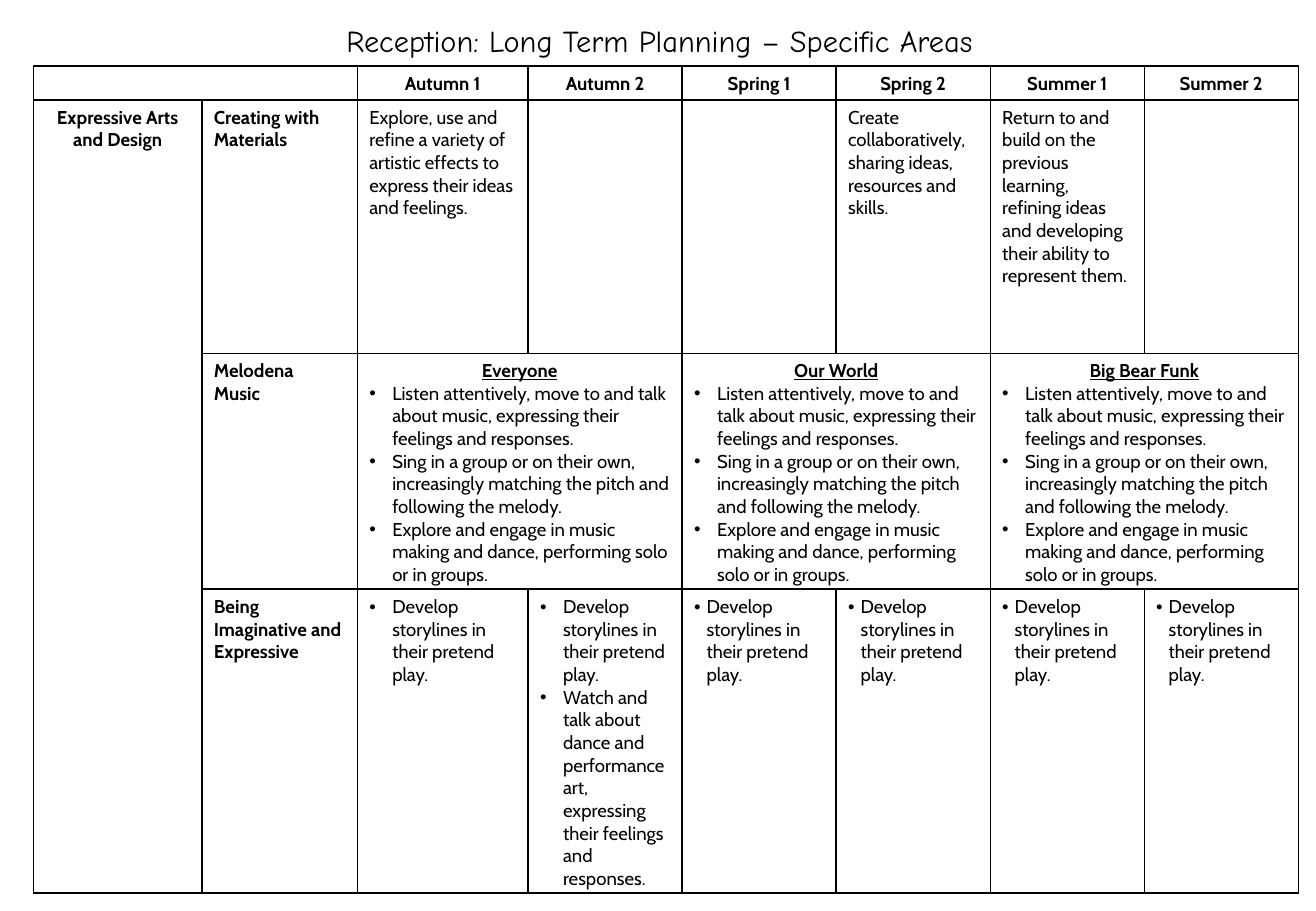
"""Build the Reception long term planning slide for Expressive Arts and Design."""
from lxml import etree
from pptx import Presentation
from pptx.dml.color import RGBColor
from pptx.enum import text as t
from pptx.oxml.ns import qn
from pptx.util import Cm, Pt

BLACK = RGBColor(0, 0, 0)
BODY_FONT, TITLE_FONT = "Cabin", "Comic Neue"
BODY_SIZE = 11
WIDE_INDENT, NARROW_INDENT = Cm(0.48), Cm(0.26)
COLUMN_WIDTHS = [3.52, 3.25, 3.57] + [3.22] * 5
ROW_HEIGHTS = [0.71, 5.3, 4.93, 6.31]
TERMS = [f"{season} {half}" for season in ("Autumn", "Spring", "Summer") for half in (1, 2)]
MATERIALS = {
    2: "Explore, use and refine a variety of artistic effects to express their ideas and feelings.",
    5: "Create collaboratively, sharing ideas, resources and skills.",
    6: "Return to and build on the previous learning, refining ideas and developing "
       "their ability to represent them.",
}
MUSIC_UNITS = {2: "Everyone", 4: "Our World", 6: "Big Bear Funk"}
MUSIC_GOALS = [
    "Listen attentively, move to and talk about music, expressing their feelings and responses.",
    "Sing in a group or on their own, increasingly matching the pitch and following the melody.",
    "Explore and engage in music making and dance, performing solo or in groups.",
]
STORYLINES = "Develop storylines in their pretend play."
DANCE = "Watch and talk about dance and performance art, expressing their feelings and responses."


def style_runs(paragraph, font_name, size, bold=False, underline=False):
    for run in paragraph.runs:
        font = run.font
        font.name, font.size = font_name, Pt(size)
        font.bold, font.underline = bold, underline
        font.color.rgb = BLACK


def add_title(slide, wording):
    title = slide.shapes.title
    title.left, title.top, title.width, title.height = Cm(6.1), Cm(0.33), Cm(15.37), Cm(1.02)
    title.text_frame.text = wording
    title.text_frame.vertical_anchor = t.MSO_ANCHOR.TOP
    heading = title.text_frame.paragraphs[0]
    heading.alignment = t.PP_ALIGN.CENTER
    style_runs(heading, TITLE_FONT, 18)


def format_cell(cell):
    cell.margin_left = cell.margin_right = Cm(0.25)
    cell.margin_top, cell.margin_bottom = Cm(0.13), Cm(0.06)
    cell.vertical_anchor = t.MSO_ANCHOR.TOP
    properties = cell._tc.get_or_add_tcPr()
    for side in ("a:lnL", "a:lnR", "a:lnT", "a:lnB"):
        border = etree.SubElement(properties, qn(side), w=str(Pt(1)))
        fill = etree.SubElement(border, qn("a:solidFill"))
        etree.SubElement(fill, qn("a:srgbClr"), val=str(BLACK))
    cell.fill.background()
    empty = cell.text_frame.paragraphs[0]._p
    etree.SubElement(empty, qn("a:endParaRPr"), sz=str(BODY_SIZE * 100))


def add_planning_table(slide):
    frame = slide.shapes.add_table(len(ROW_HEIGHTS), len(COLUMN_WIDTHS), Cm(0.7), Cm(1.38),
                                   Cm(sum(COLUMN_WIDTHS)), Cm(sum(ROW_HEIGHTS)))
    planning = frame.table
    planning.first_row = planning.horz_banding = False
    for column, width in zip(planning.columns, COLUMN_WIDTHS):
        column.width = Cm(width)
    for row, height in zip(planning.rows, ROW_HEIGHTS):
        row.height = Cm(height)
    for cell in planning.iter_cells():
        format_cell(cell)
    planning.cell(0, 0).merge(planning.cell(0, 1))
    planning.cell(1, 0).merge(planning.cell(3, 0))
    for column in MUSIC_UNITS:
        planning.cell(2, column).merge(planning.cell(2, column + 1))
    return planning


def write(cell, wording, centred=False, **style):
    cell.text_frame.text = wording
    for paragraph in cell.text_frame.paragraphs:
        paragraph.alignment = t.PP_ALIGN.CENTER if centred else t.PP_ALIGN.LEFT
        style_runs(paragraph, BODY_FONT, BODY_SIZE, **style)


def make_bullet(paragraph, indent):
    properties = paragraph._p.get_or_add_pPr()
    properties.set("marL", str(indent))
    properties.set("indent", str(-indent))
    etree.SubElement(properties, qn("a:buFont"), typeface="Arial")
    etree.SubElement(properties, qn("a:buChar"), char="•")


def write_bullets(cell, goals, indent):
    write(cell, "\n".join(goals))
    for paragraph in cell.text_frame.paragraphs:
        make_bullet(paragraph, indent)


def write_music_unit(cell, unit):
    write(cell, "\n".join([unit, *MUSIC_GOALS]))
    heading, *goals = cell.text_frame.paragraphs
    heading.alignment = t.PP_ALIGN.CENTER
    style_runs(heading, BODY_FONT, BODY_SIZE, bold=True, underline=True)
    for goal in goals:
        make_bullet(goal, WIDE_INDENT)


def main():
    deck = Presentation()
    deck.slide_width, deck.slide_height = Cm(27.51), Cm(19.05)
    slide = deck.slides.add_slide(deck.slide_layouts[5])
    add_title(slide, "Reception: Long Term Planning – Specific Areas")
    planning = add_planning_table(slide)

    for column, term in enumerate(TERMS, 2):
        write(planning.cell(0, column), term, centred=True, bold=True)
    write(planning.cell(1, 0), "Expressive Arts and Design", centred=True, bold=True)
    strands = ["Creating with Materials", "Melodena\nMusic", "Being Imaginative and Expressive"]
    for row, strand in enumerate(strands, 1):
        write(planning.cell(row, 1), strand, bold=True)

    for column, goal in MATERIALS.items():
        write(planning.cell(1, column), goal)
    for column, unit in MUSIC_UNITS.items():
        write_music_unit(planning.cell(2, column), unit)
    for column in range(2, len(COLUMN_WIDTHS)):
        goals = [STORYLINES, DANCE] if column == 3 else [STORYLINES]
        indent = WIDE_INDENT if column < 4 else NARROW_INDENT
        write_bullets(planning.cell(3, column), goals, indent)
    deck.save("out.pptx")


if __name__ == "__main__":
    main()
